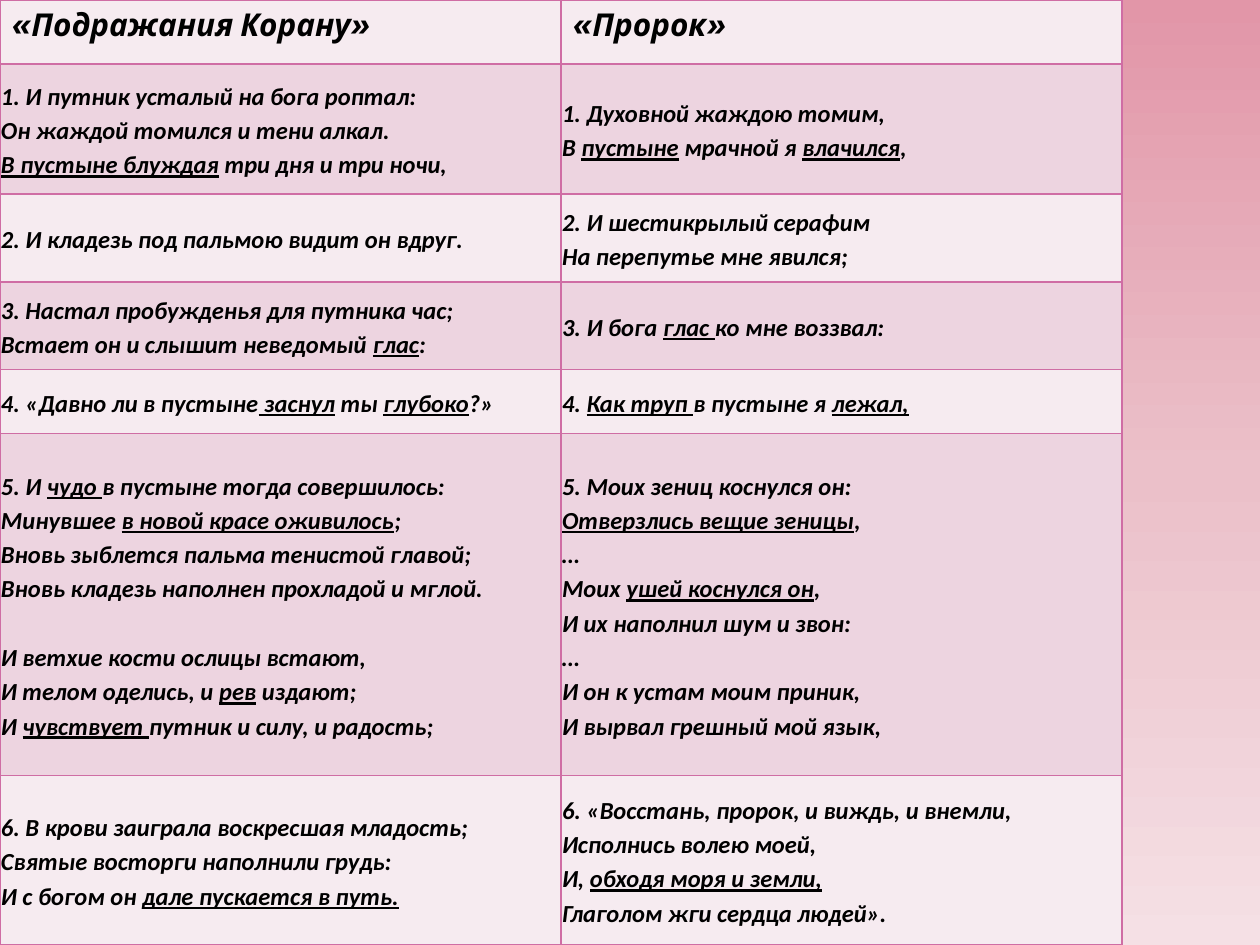
from lxml.etree import SubElement
from pptx import Presentation
from pptx.dml.color import RGBColor
from pptx.enum.text import MSO_ANCHOR
from pptx.oxml.ns import qn
from pptx.util import Cm, Pt

BACKGROUND_STOPS = [(0, "E296A8"), (50, "EBC0C9"), (100, "F5E0E5")]
BAND_FILLS = ["F6EBF0", "EDD4E0"]
BORDER = "CF6DA4"
ROW_HEIGHTS = [1.29, 2.62, 1.77, 1.77, 1.29, 6.89, 3.42]
STANZA_GAP = 19.6

HEADINGS = ("«Подражания Корану»", "«Пророк»")
# Underscores enclose underlined words; an empty line separates stanzas.
VERSES = [
    ("1. И путник усталый на бога роптал:\nОн жаждой томился и тени алкал.\n"
     "_В пустыне блуждая_ три дня и три ночи,",
     "1. Духовной жаждою томим,\nВ _пустыне_ мрачной я _влачился_,"),
    ("2. И кладезь под пальмою видит он вдруг.",
     "2. И шестикрылый серафим\nНа перепутье мне явился;"),
    ("3. Настал пробужденья для путника час;\n"
     "Встает он и слышит неведомый _глас_:",
     "3. И бога _глас _ко мне воззвал:"),
    ("4. «Давно ли в пустыне_ заснул_ ты _глубоко_?»",
     "4. _Как труп _в пустыне я _лежал,_"),
    ("5. И _чудо _в пустыне тогда совершилось:\n"
     "Минувшее _в новой красе оживилось_;\n"
     "Вновь зыблется пальма тенистой главой;\n"
     "Вновь кладезь наполнен прохладой и мглой.\n\n"
     "И ветхие кости ослицы встают,\nИ телом оделись, и _рев_ издают;\n"
     "И _чувствует _путник и силу, и радость;",
     "5. Моих зениц коснулся он:\n_Отверзлись вещие зеницы_,\n…\n"
     "Моих _ушей коснулся он_,\nИ их наполнил шум и звон:\n…\n"
     "И он к устам моим приник,\nИ вырвал грешный мой язык,"),
    ("6. В крови заиграла воскресшая младость;\n"
     "Святые восторги наполнили грудь:\n"
     "И с богом он _дале пускается в путь._",
     "6. «Восстань, пророк, и виждь, и внемли,\nИсполнись волею моей,\n"
     "И, _обходя моря и земли,_\nГлаголом жги сердца людей»."),
]


def color(value):
    return RGBColor.from_string(value)


def write_text(frame, text, font="Calibri", size=14, ink="000000", spacing=None):
    """Write stanzas as paragraphs, lines as breaks and _marked_ words underlined."""
    for number, stanza in enumerate(text.split("\n\n")):
        para = frame.add_paragraph() if number else frame.paragraphs[0]
        para.line_spacing = spacing
        if number:
            para.space_before = Pt(STANZA_GAP)
        for row, line in enumerate(stanza.split("\n")):
            if row:
                para.add_line_break()
            for index, piece in enumerate(line.split("_")):
                if not piece:
                    continue
                span = para.add_run()
                span.text = piece
                span.font.name, span.font.size = font, Pt(size)
                span.font.bold = span.font.italic = True
                span.font.underline = index % 2 == 1
                span.font.color.rgb = color(ink)


def add_solid(parent, value):
    fill = SubElement(parent, qn("a:solidFill"))
    SubElement(fill, qn("a:srgbClr"), val=value)


def format_cell(cell, fill):
    """Give the cell its border on all sides and its fill."""
    properties = cell._tc.get_or_add_tcPr()
    for side in ("a:lnL", "a:lnR", "a:lnT", "a:lnB"):
        add_solid(SubElement(properties, qn(side), w=str(Pt(1))), BORDER)
    cell.fill.solid()
    cell.fill.fore_color.rgb = color(fill)


def paint_background(page):
    fill = page.background.fill
    fill.gradient()
    fill.gradient_angle = 270
    stops = page.element.find(".//" + qn("a:gsLst"))
    for stop in list(stops):
        stops.remove(stop)
    for position, value in BACKGROUND_STOPS:
        stop = SubElement(stops, qn("a:gs"), pos=str(position * 1000))
        SubElement(stop, qn("a:srgbClr"), val=value)


def add_comparison(page, left, top, width, height):
    """Place the two poems side by side, one matching passage to a row."""
    rows = [HEADINGS] + VERSES
    table = page.shapes.add_table(
        len(rows), len(HEADINGS), left, top, width, height).table
    table.first_row = table.horz_banding = False
    for column in table.columns:
        column.width = width // len(HEADINGS)
    for number, texts in enumerate(rows):
        table.rows[number].height = int(height * ROW_HEIGHTS[number] / sum(ROW_HEIGHTS))
        for index, text in enumerate(texts):
            cell = table.cell(number, index)
            format_cell(cell, BAND_FILLS[number % 2])
            if number == 0:
                write_text(cell.text_frame, text, font="Cabin", size=18)
                continue
            cell.vertical_anchor = MSO_ANCHOR.MIDDLE
            cell.margin_left = cell.margin_right = Cm(0.02)
            cell.margin_top = cell.margin_bottom = Cm(0.02)
            write_text(cell.text_frame, text, spacing=1.15)


def main():
    deck = Presentation()
    deck.slide_width, deck.slide_height = Cm(25.4), Cm(19.05)
    page = deck.slides.add_slide(deck.slide_layouts[6])
    paint_background(page)
    add_comparison(page, Cm(0), Cm(0), Cm(22.62), deck.slide_height)
    deck.save("out.pptx")


if __name__ == "__main__":
    main()
